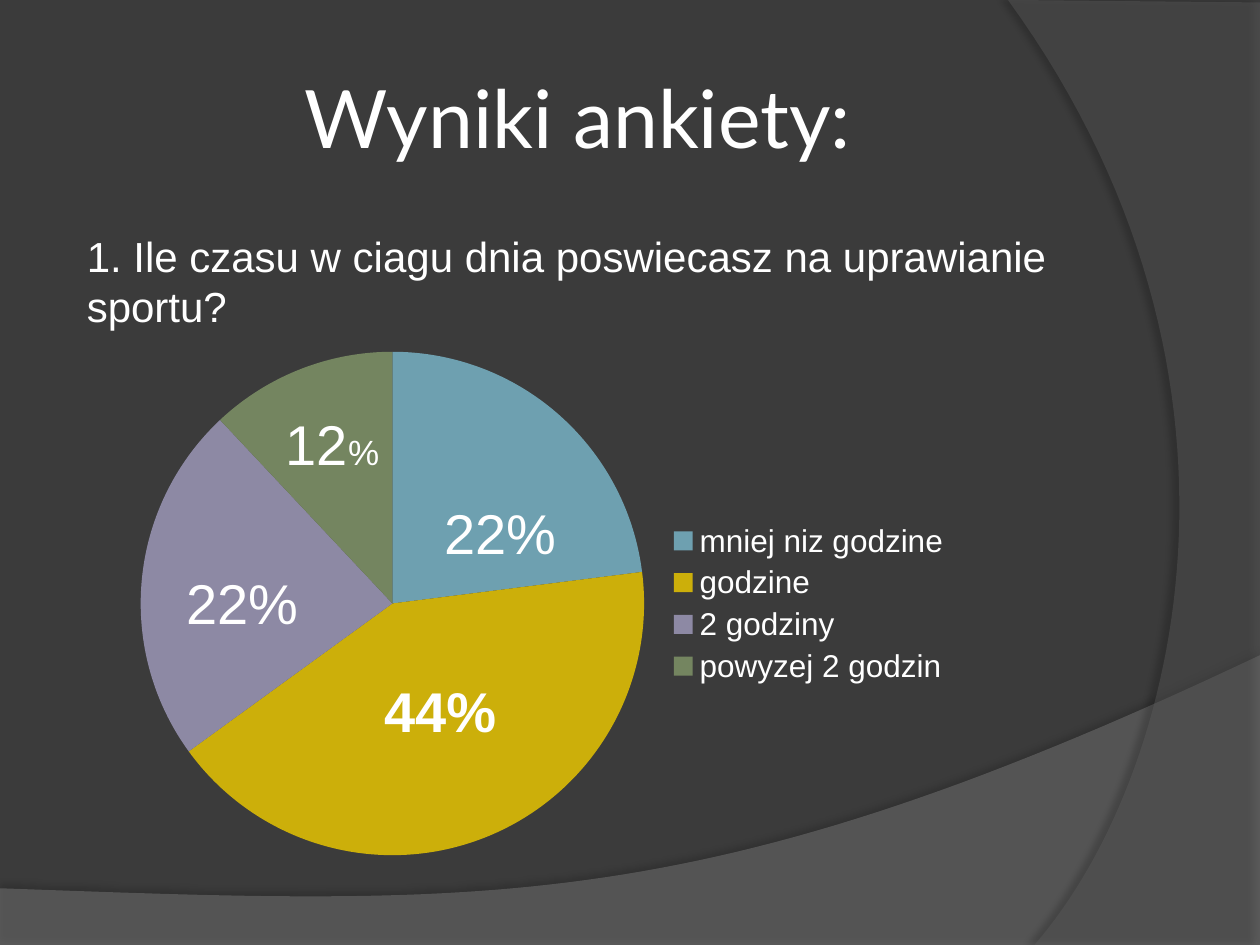
from typing import NamedTuple

from lxml import etree
from pptx import Presentation
from pptx import util as u
from pptx.chart import data as chart_data
from pptx.dml import color
from pptx.enum import chart as chart_enum
from pptx.enum import text
from pptx.oxml import ns, parse_xml

EMU_PER_PX = 9144  # 100 px to the inch
WHITE = "FFFFFF"
CURVE_STEPS = 60
Point = tuple[int, int]


class Box(NamedTuple):
    left: int
    top: int
    width: int
    height: int


class Run(NamedTuple):
    words: str
    size: int
    bold: bool = False


class Label(NamedTuple):
    box: Box
    runs: list[Run]


class Wave(NamedTuple):
    """A background area: straight points, then a curve back to the start side."""
    corners: list[Point]
    curve: tuple[Point, Point, Point]
    ending: list[Point]
    fill: str
    opacity: int
    shadow_opacity: int
    shadow_distance: float
    shadow_angle: int


class Slice(NamedTuple):
    answer: str
    share: int
    fill: str


WAVES = [
    Wave([(0, 705), (0, 751), (1000, 751), (1000, 520)],
         ((559, 729), (391, 719), (0, 705)), [], "7F7F7F", 45, 35, 3.5, 270),
    Wave([(1000, 2), (1000, 750), (821, 750)],
         ((935, 619), (1018, 300), (800, 0)), [(1000, 2)], "5E5E5E", 40, 45, 4, 180),
]
SLICES = [
    Slice("mniej niz godzine", 23, "6EA0B0"),
    Slice("godzine", 42, "CCAF0A"),
    Slice("2 godziny", 23, "8D89A4"),
    Slice("powyzej 2 godzin", 12, "748560"),
]
QUESTION = Label(
    Box(59, 178, 898, 91),
    [Run("1. Ile czasu w ciagu dnia poswiecasz na uprawianie sportu?", 24)])
SHARE_LABELS = [
    Label(Box(343, 391, 110, 64), [Run("22%", 32)]),
    Label(Box(295, 532, 118, 64), [Run("44%", 32, True)]),
    Label(Box(138, 446, 134, 64), [Run("22%", 32)]),
    Label(Box(217, 320, 94, 64), [Run("12", 32), Run("%", 20)]),
]


def px(length: int) -> u.Emu:
    return u.Emu(length * EMU_PER_PX)


def place(box: Box) -> list[u.Emu]:
    return [px(length) for length in box]


def rgb(hex_code: str) -> color.RGBColor:
    return color.RGBColor.from_string(hex_code)


def style_font(font, size: int, name: str = "Arial", bold: bool = False) -> None:
    for key, value in {"size": u.Pt(size), "name": name, "bold": bold}.items():
        setattr(font, key, value)
    font.color.rgb = rgb(WHITE)


def bezier(start: Point, curve: tuple[Point, Point, Point]) -> list[tuple[float, float]]:
    """Points along a cubic curve, without its start."""
    points = []
    for step in range(1, CURVE_STEPS + 1):
        t = step / CURVE_STEPS
        weights = ((1 - t) ** 3, 3 * t * (1 - t) ** 2, 3 * t * t * (1 - t), t ** 3)
        points.append(tuple(
            sum(weight * point[axis] for weight, point in zip(weights, (start, *curve)))
            for axis in (0, 1)))
    return points


def draw_wave(slide, wave: Wave) -> None:
    outline = wave.corners + bezier(wave.corners[-1], wave.curve) + wave.ending
    # Whole EMU coordinates keep the curve smooth.
    outline = [(round(x * EMU_PER_PX), round(y * EMU_PER_PX)) for x, y in outline]
    builder = slide.shapes.build_freeform(*outline[0])
    builder.add_line_segments(outline[1:], close=True)
    area = builder.convert_to_shape()
    area.fill.solid()
    area.fill.fore_color.rgb = rgb(wave.fill)
    area.line.fill.background()
    properties = area.element.spPr
    fill_color = properties.find(".//" + ns.qn("a:srgbClr"))
    etree.SubElement(fill_color, ns.qn("a:alpha"), val=str(wave.opacity * 1000))
    properties.append(parse_xml(
        f'<a:effectLst {ns.nsdecls("a")}><a:outerShdw blurRad="{u.Pt(4)}" '
        f'dist="{u.Pt(wave.shadow_distance)}" dir="{wave.shadow_angle * 60000}" '
        f'rotWithShape="0"><a:srgbClr val="000000">'
        f'<a:alpha val="{wave.shadow_opacity * 1000}"/></a:srgbClr>'
        f'</a:outerShdw></a:effectLst>'))


def draw_title(slide, words: str) -> None:
    title = slide.shapes.title
    title.left, title.top, title.width, title.height = place(Box(50, 30, 817, 125))
    frame = title.text_frame
    frame.text = words
    margins = dict.fromkeys(
        ("margin_left", "margin_top", "margin_right", "margin_bottom"), px(5))
    for key, value in {**margins, "vertical_anchor": text.MSO_ANCHOR.MIDDLE}.items():
        setattr(frame, key, value)
    paragraph = frame.paragraphs[0]
    paragraph.alignment = text.PP_ALIGN.CENTER
    style_font(paragraph.runs[0].font, 46, "Lato")


def draw_label(slide, label: Label) -> None:
    frame = slide.shapes.add_textbox(*place(label.box)).text_frame
    frame.word_wrap = True
    frame.auto_size = text.MSO_AUTO_SIZE.SHAPE_TO_FIT_TEXT
    for part in label.runs:
        run = frame.paragraphs[0].add_run()
        run.text = part.words
        style_font(run.font, part.size, bold=part.bold)


def draw_pie(slide, box: Box) -> None:
    answers = chart_data.CategoryChartData()
    answers.categories = [part.answer for part in SLICES]
    answers.add_series("Series 1", [part.share for part in SLICES])
    pie = slide.shapes.add_chart(
        chart_enum.XL_CHART_TYPE.PIE, *place(box), answers).chart
    style_font(pie.font, 18)
    pie.has_title = False
    pie.has_legend = True
    pie.legend.position = chart_enum.XL_LEGEND_POSITION.RIGHT
    pie.legend.include_in_layout = False
    pie.plots[0].vary_by_categories = True
    for index, part in enumerate(SLICES):
        fill = pie.plots[0].series[0].points[index].format.fill
        fill.solid()
        fill.fore_color.rgb = rgb(part.fill)
    set_plot_area(pie, {"x": 0.02, "y": 0.05, "w": 0.6, "h": 0.9})


def set_plot_area(chart, fractions: dict[str, float]) -> None:
    plot_area = chart.element.find(".//" + ns.qn("c:plotArea"))
    for old_layout in plot_area.findall(ns.qn("c:layout")):
        plot_area.remove(old_layout)
    sizes = "".join(f'<c:{key} val="{value}"/>' for key, value in fractions.items())
    plot_area.insert(0, parse_xml(
        f'<c:layout {ns.nsdecls("c")}><c:manualLayout><c:layoutTarget val="inner"/>'
        f'<c:xMode val="edge"/><c:yMode val="edge"/>{sizes}'
        f'</c:manualLayout></c:layout>'))


def main() -> None:
    deck = Presentation()
    deck.slide_width, deck.slide_height = px(1000), px(750)
    slide = deck.slides.add_slide(deck.slide_layouts[5])
    slide.background.fill.solid()
    slide.background.fill.fore_color.rgb = rgb("3B3B3B")
    for wave in WAVES:
        draw_wave(slide, wave)
    draw_title(slide, "Wyniki ankiety:")
    draw_label(slide, QUESTION)
    draw_pie(slide, Box(98, 257, 667, 444))
    for label in SHARE_LABELS:
        draw_label(slide, label)
    deck.save("out.pptx")


if __name__ == "__main__":
    main()
